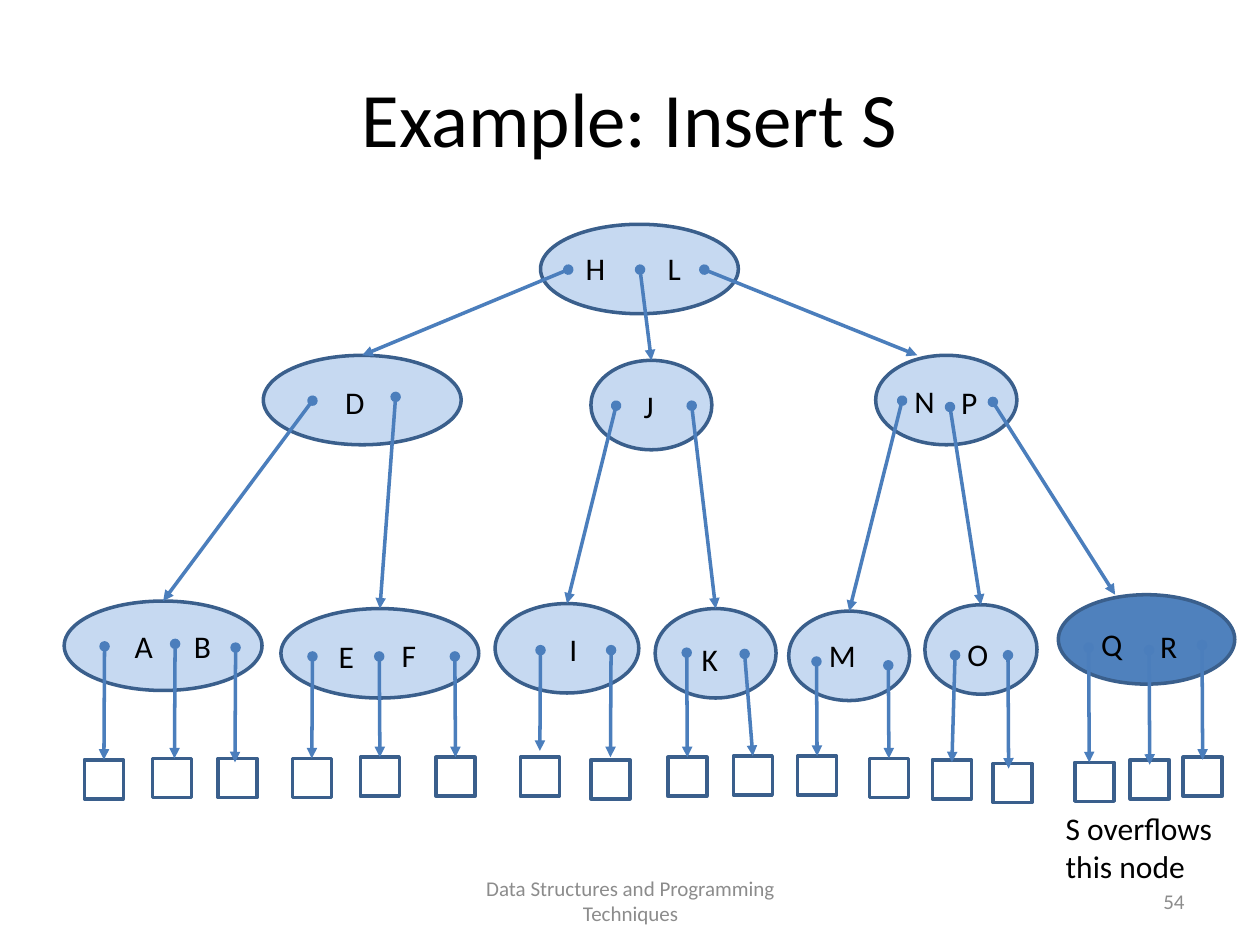
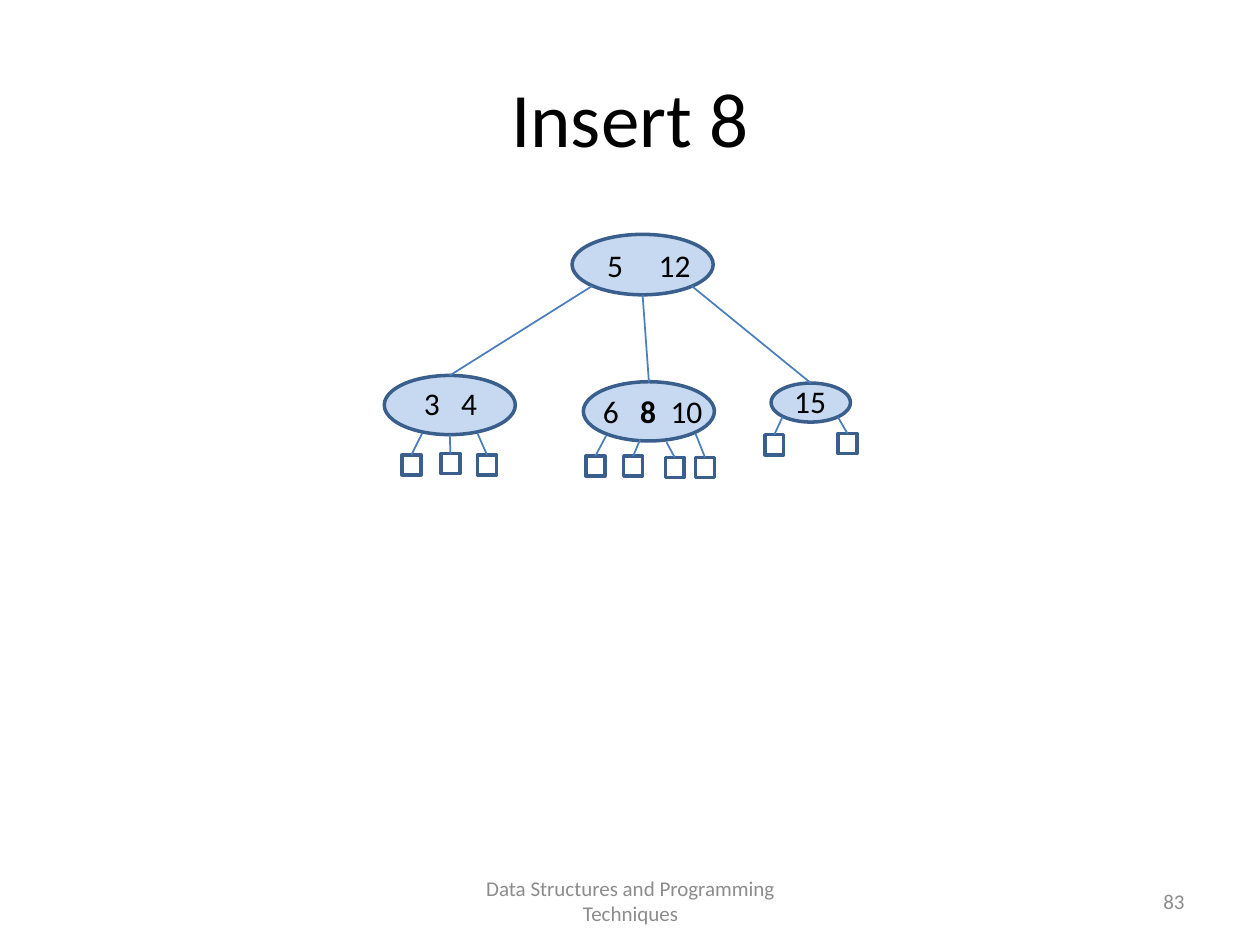
"""Build two slides that show insertions into B-trees."""
from lxml.etree import SubElement
from pptx import Presentation
from pptx.dml.color import RGBColor
from pptx.enum.shapes import MSO_CONNECTOR, MSO_SHAPE
from pptx.enum.text import MSO_ANCHOR, PP_ALIGN
from pptx.oxml.ns import qn
from pptx.util import Inches, Pt

FONT = "Calibri"
BLACK, GRAY = "000000", "8C8C8C"
PALE, BLUE = "C6D9F1", "4F81BD"
OUTLINE, LINK = "3A5F8C", "4B7EBC"
LEFT, CENTER, RIGHT = PP_ALIGN.LEFT, PP_ALIGN.CENTER, PP_ALIGN.RIGHT
FOOTER = "Data Structures and Programming Techniques"
COLUMNS = 100

presentation = Presentation()
presentation.slide_width = Inches(10)
presentation.slide_height = Inches(7.5)
CELL = presentation.slide_width // COLUMNS


def paint(target, color):
    """Give a fill, line or font a solid colour."""
    if hasattr(target, "solid"):
        target.solid()
        target.fore_color.rgb = RGBColor.from_string(color)
    else:
        target.color.rgb = RGBColor.from_string(color)


def add_text(slide, box, runs, size=18, color=BLACK, align=LEFT, anchor=MSO_ANCHOR.TOP):
    """Add a text box; each run is (text, bold, letter spacing in points)."""
    shape = slide.shapes.add_textbox(*[round(length * CELL) for length in box])
    frame = shape.text_frame
    frame.word_wrap = True
    frame.vertical_anchor = anchor
    paragraph = frame.paragraphs[0]
    paragraph.alignment = align
    for text, bold, spacing in runs:
        run = paragraph.add_run()
        run.text = text
        run.font.name = FONT
        run.font.size = Pt(size)
        run.font.bold = bold
        paint(run.font, color)
        if spacing:
            run._r.get_or_add_rPr().set("spc", str(round(spacing * 100)))


# Nodes: left, top, width, height, fill, link start, link end's shift from the top middle.
# Leaves: left, top, link start, link end's shift. Keys: box and runs.
ROW_1, ROW_2 = 17.8, 28.2
letter_nodes = [
    (42.9, ROW_1, 15.7, 7.1, PALE, None, None),
    (20.9, ROW_2, 15.7, 7.1, PALE, (45.1, 21.4), None),
    (46.9, 28.6, 9.6, 7.1, PALE, (50.8, 21.4), None),
    (69.5, ROW_2, 11.2, 7.1, PALE, (55.9, 21.4), (-2.3, 0)),
    (5.1, 47.7, 15.7, 7.1, PALE, (24.8, 31.8), None),
    (22.3, 48.3, 15.7, 7.1, PALE, (31.4, 31.5), None),
    (39.3, 47.9, 11.4, 7.1, PALE, (48.9, 32.2), None),
    (52, 48.3, 9.6, 7.1, PALE, (54.9, 32.2), None),
    (62.6, 48.5, 9.6, 7.1, PALE, (71.6, 31.8), None),
    (73.4, 48, 8.9, 7.1, PALE, (75.4, 32.3), None),
    (84, 47.2, 14, 7.1, BLUE, (78.8, 31.9), (-2.5, 0)),
]
letter_leaves = [
    (6.7, 60.3, (8.3, 51.3), None),
    (12.1, 60.2, (13.9, 51.1), (0.2, 0)),
    (17.3, 60.2, (18.7, 51.4), (-0.2, 0.3)),
    (23.2, 60.2, (24.8, 52.1), None),
    (28.6, 60.1, (30.1, 52.1), None),
    (34.6, 60.1, (36.1, 52.1), None),
    (41.3, 60.1, (42.9, 51.6), (0, -0.5)),
    (46.9, 60.3, (48.5, 51.6), (0, -0.2)),
    (53, 60.1, (54.5, 51.8), None),
    (58.2, 60, (59.1, 51.9), None),
    (63.3, 60, (64.8, 52.5), None),
    (69, 60.2, (70.5, 52.8), None),
    (74, 60.3, (75.8, 52), (0, 0.2)),
    (78.8, 60.6, (80, 52), (-0.3, 0.4)),
    (85.3, 60.5, (86.4, 51.4), (-0.4, 0)),
    (89.7, 60.3, (91.2, 51.6), (0, 0.4)),
    (93.9, 60.1, (95.4, 51.2), (0, 0.2)),
]
letters = {
    "H": (45.5, 19.3), "L": (52, 19.3), "D": (26.4, 29.9), "J": (50.1, 30.2),
    "N": (71.6, 29.8), "P": (75.3, 29.9), "A": (9.7, 49.3), "B": (14.4, 49.3),
    "E": (25.9, 50.1), "F": (30.9, 50), "I": (44.2, 49.5), "K": (54.7, 50.3),
    "M": (64.8, 50), "O": (75.8, 49.9), "Q": (86.4, 49.1), "R": (91.1, 49.3),
}
letter_keys = [((*place, 4.7, 4), [(letter, False, 0)]) for letter, place in letters.items()]
letter_keys.append(((83.6, 63.7, 16.4, 7.1), [("S overflows this node", False, 0)]))

number_nodes = [
    (45.4, 18.6, 11.2, 4.8, PALE, None, None),
    (30.5, 29.8, 10.4, 4.7, PALE, (47, 22.7), None),
    (46.3, 30.3, 10.4, 4.7, PALE, (51, 23.4), None),
    (61.2, 30.4, 6.3, 3.1, PALE, (54.9, 22.7), None),
]
number_leaves = [
    (31.9, 36.1, (33.5, 34.4), None),
    (35, 36, (35.7, 34.5), None),
    (37.9, 36.1, (37.9, 34.4), None),
    (46.5, 36.2, (48.1, 34.6), None),
    (49.5, 36.2, (50.8, 34.9), None),
    (52.8, 36.3, (52.9, 35.1), None),
    (55.2, 36.3, (55.2, 34.4), None),
    (60.7, 34.5, (62.1, 33.1), None),
    (66.5, 34.4, (66.5, 33.1), None),
]
number_keys = [
    ((45.6, 19, 11.8, 4), [("5", False, 0), (" ", False, 16.3), ("12", False, 0)]),
    ((30.9, 30, 9.7, 4), [("3", False, 0), (" ", False, 8.1), ("4", False, 0)]),
    ((46.2, 30.6, 11.2, 4), [("6", False, 0), (" ", False, 8.1), ("8", True, 0),
                             (" ", False, 4.1), ("10", False, 0)]),
    ((61.6, 29.8, 5.4, 4), [("15", False, 0)]),
]

pages = [
    ("Example: Insert S", "54", letter_nodes, letter_leaves, letter_keys, (3.1, 3.1), 2, LEFT),
    ("Insert 8", "83", number_nodes, number_leaves, number_keys, (1.5, 1.6), 1, CENTER),
]

for title, number, nodes, leaves, keys, leaf_size, link_width, key_align in pages:
    slide = presentation.slides.add_slide(presentation.slide_layouts[6])
    add_text(slide, (5, 3, 90, 12.5), [(title, False, 0)], 44, BLACK, CENTER, MSO_ANCHOR.MIDDLE)

    parts = [(MSO_SHAPE.OVAL, *node) for node in nodes]
    parts += [(MSO_SHAPE.RECTANGLE, left, top, *leaf_size, None, start, shift)
              for left, top, start, shift in leaves]
    links = []
    for kind, left, top, width, height, fill, start, shift in parts:
        box = [round(length * CELL) for length in (left, top, width, height)]
        shape = slide.shapes.add_shape(kind, *box)
        shape.shadow.inherit = False
        shape.line.width = Pt(2)
        paint(shape.line, OUTLINE)
        if fill:
            paint(shape.fill, fill)
        else:
            shape.fill.background()
        if start:
            links.append((shape, start, shift))

    for shape, start, shift in links:
        shift_x, shift_y = shift or (0, 0)
        begin = [round(length * CELL) for length in start]
        end = (shape.left + shape.width // 2 + round(shift_x * CELL),
               shape.top + round(shift_y * CELL))
        connector = slide.shapes.add_connector(MSO_CONNECTOR.STRAIGHT, *begin, *end)
        if shift is None:
            connector.end_connect(shape, 0)
        connector.line.width = Pt(link_width)
        paint(connector.line, LINK)
        if link_width == 2:
            line = connector.line._get_or_add_ln()
            SubElement(line, qn("a:headEnd"), type="oval")
            SubElement(line, qn("a:tailEnd"), type="triangle")
        SubElement(connector._element.spPr, qn("a:effectLst"))

    for box, runs in keys:
        add_text(slide, box, runs, align=key_align)

    for box, text, align in [((34.2, 69.5, 31.7, 4), FOOTER, CENTER),
                             ((71.7, 69.5, 23.3, 4), number, RIGHT)]:
        add_text(slide, box, [(text, False, 0)], 12, GRAY, align, MSO_ANCHOR.MIDDLE)

presentation.save("out.pptx")
